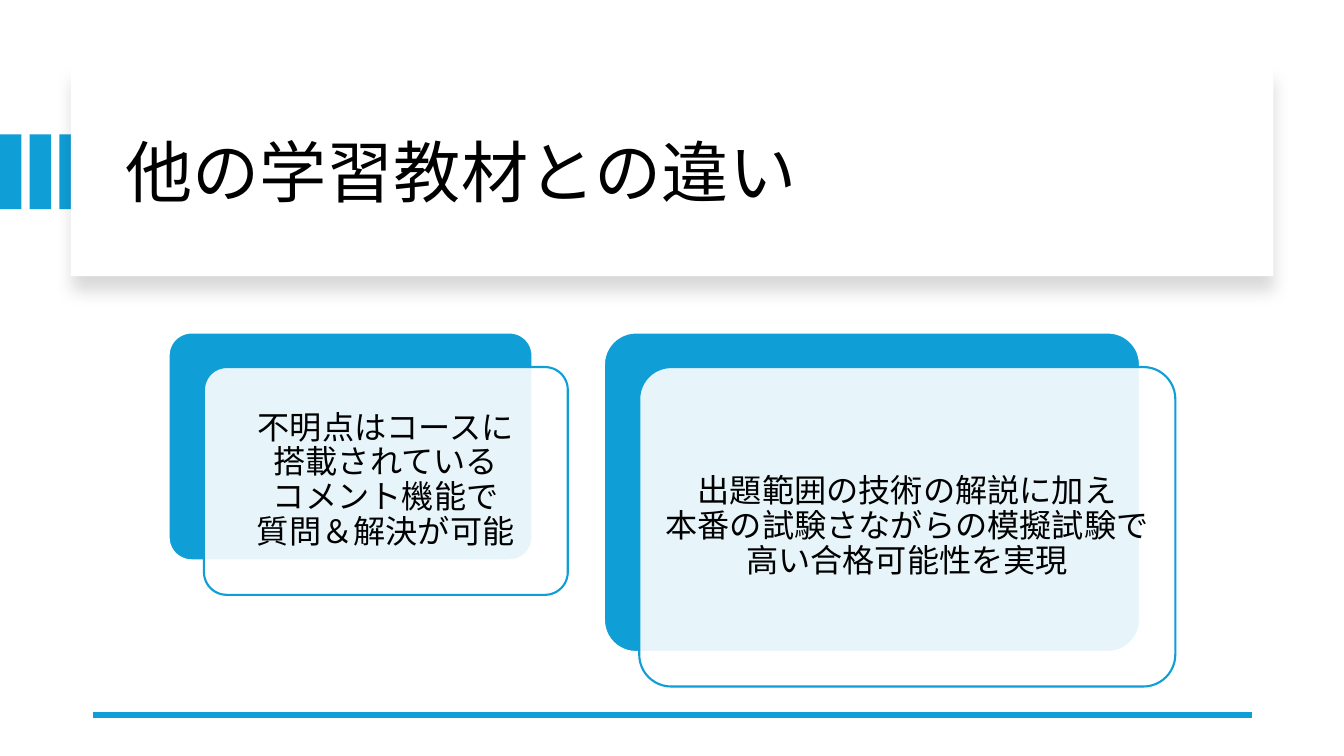
from lxml.etree import SubElement
from pptx import Presentation
from pptx.dml.color import RGBColor
from pptx.enum.shapes import MSO_CONNECTOR, MSO_SHAPE
from pptx.enum.text import MSO_ANCHOR, MSO_AUTO_SIZE, PP_ALIGN
from pptx.oxml.ns import qn
from pptx.util import Cm, Pt

COLOURS = {"accent": "0F9ED5", "paper": "FFFFFF", "ink": "000000"}
FONT = "Noto Sans CJK JP"
CORNER = 0.1
OFFSET_X, OFFSET_Y = 0.89, 0.87

# Left, top, width and height in centimetres, then the wording
PANELS = [
    (4.25, 8.38, 9.17, 5.74,
     "不明点はコースに\v搭載されている\vコメント機能で\v質問＆解決が可能"),
    (15.22, 8.38, 13.51, 8.05,
     "出題範囲の技術の解説に加え\v本番の試験さながらの模擬試験で\v高い合格可能性を実現"),
]


def colour(name):
    return RGBColor.from_string(COLOURS[name])


def write_text(box, text, size, align=PP_ALIGN.LEFT, space_after=0, inset=None):
    frame = box.text_frame
    frame.word_wrap = True
    frame.auto_size = MSO_AUTO_SIZE.NONE
    frame.vertical_anchor = MSO_ANCHOR.MIDDLE
    if inset is not None:
        frame.margin_left = frame.margin_right = Cm(inset)
        frame.margin_top = frame.margin_bottom = Cm(inset)
    para = frame.paragraphs[0]
    para.text = text
    para.alignment = align
    para.line_spacing = 0.9
    para.space_after = Pt(space_after)
    for span in para.runs:
        span.font.size = Pt(size)
        span.font.name = FONT
        span.font.color.rgb = colour("ink")
        east_asian = SubElement(span.font._element, qn("a:ea"))
        east_asian.set("typeface", FONT)


def add_block(shapes, preset, left, top, width, height, fill, line=None, opacity=None):
    block = shapes.add_shape(preset, Cm(left), Cm(top), Cm(width), Cm(height))
    block.shadow.inherit = False
    block.fill.solid()
    block.fill.fore_color.rgb = colour(fill)
    if opacity is not None:
        value = block.element.spPr.find(qn("a:solidFill")).find(qn("a:srgbClr"))
        SubElement(value, qn("a:alpha")).set("val", str(opacity * 1000))
    if line:
        block.line.color.rgb = colour(line)
        block.line.width = Pt(1.5)
    else:
        block.line.fill.background()
    return block


def add_soft_shadow(block):
    effects = block.element.spPr.find(qn("a:effectLst"))
    shadow = SubElement(effects, qn("a:outerShdw"), blurRad=str(Pt(11)),
                        dist=str(Pt(10)), dir="5400000", algn="t", rotWithShape="0")
    value = SubElement(shadow, qn("a:srgbClr"), val=COLOURS["ink"])
    SubElement(value, qn("a:alpha"), val="15000")


def add_stripes(page):
    stripes = page.shapes.add_group_shape().shapes
    for index in range(3):
        add_block(stripes, MSO_SHAPE.RECTANGLE, index * 0.75, 3.39, 0.54, 1.88, "accent")


def add_title(page, text):
    card = add_block(page.shapes, MSO_SHAPE.RECTANGLE, 1.79, 1.7, 30.3, 5.26, "paper")
    add_soft_shadow(card)
    title = page.shapes.title
    title.left, title.top, title.width, title.height = Cm(2.9), Cm(2.26), Cm(28.27), Cm(4.32)
    write_text(title, text, 48)
    card.element.addnext(title.element)  # Bring the title in front of its card


def add_rule(page):
    rule = page.shapes.add_connector(
        MSO_CONNECTOR.STRAIGHT, Cm(31.55), Cm(18.01), Cm(2.34), Cm(18.01))
    rule.line.color.rgb = colour("accent")
    rule.line.width = Pt(4.5)
    SubElement(rule.element.spPr, qn("a:effectLst"))


def add_panel(shapes, left, top, width, height, text):
    front_left, front_top = left + OFFSET_X, top + OFFSET_Y
    back = add_block(shapes, MSO_SHAPE.ROUNDED_RECTANGLE, left, top, width, height,
                     "accent", line="paper")
    front = add_block(shapes, MSO_SHAPE.ROUNDED_RECTANGLE, front_left, front_top,
                      width, height, "paper", line="accent", opacity=90)
    for block in (back, front):
        block.adjustments[0] = CORNER
    # Keep the text clear of the rounded corners
    gap = 0.03 * height
    box = shapes.add_textbox(Cm(front_left + gap), Cm(front_top + gap),
                             Cm(width - 2 * gap), Cm(height - 2 * gap))
    write_text(box, text, 23, align=PP_ALIGN.CENTER, space_after=8, inset=0.24)


def main():
    deck = Presentation()
    deck.slide_width, deck.slide_height = Cm(33.87), Cm(19.05)
    page = deck.slides.add_slide(deck.slide_layouts[5])

    # Header
    add_stripes(page)
    add_title(page, "他の学習教材との違い")

    # Bottom rule
    add_rule(page)

    # Panels
    panels = page.shapes.add_group_shape().shapes
    for panel in PANELS:
        add_panel(panels, *panel)

    deck.save("out.pptx")


if __name__ == "__main__":
    main()
